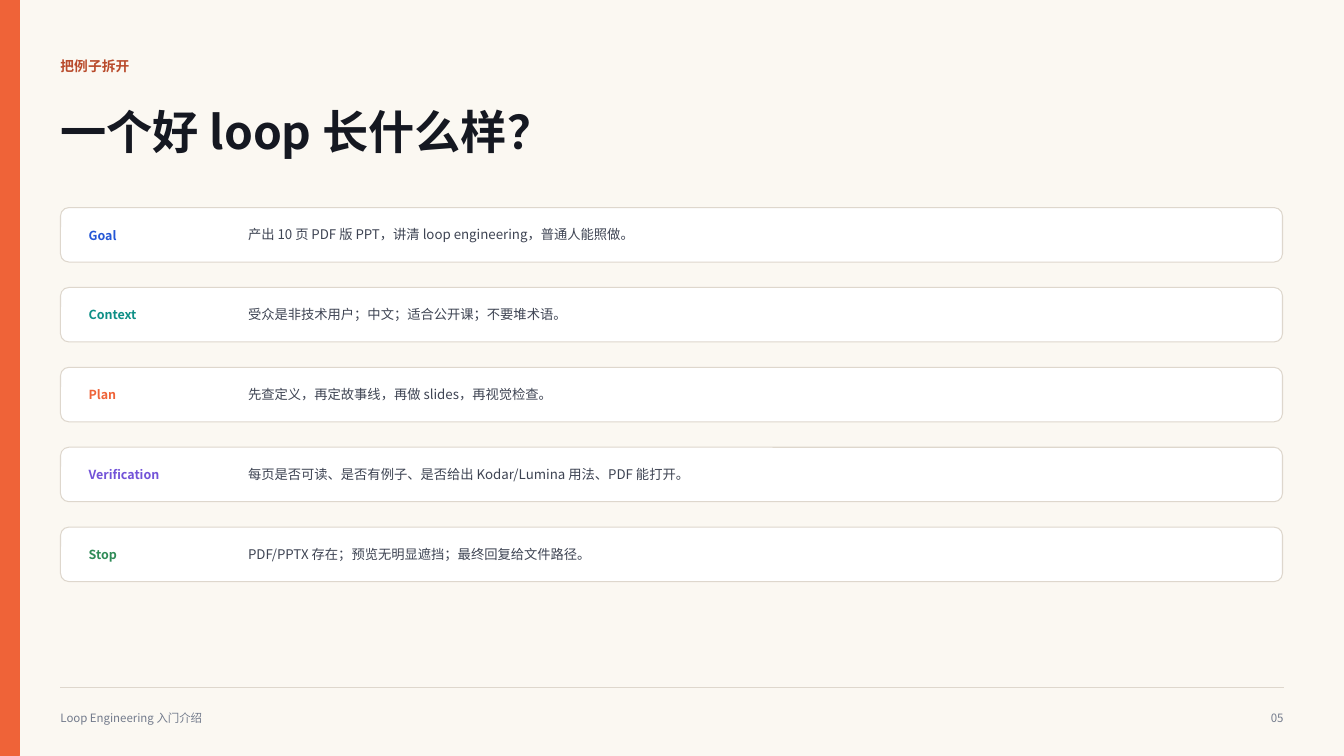
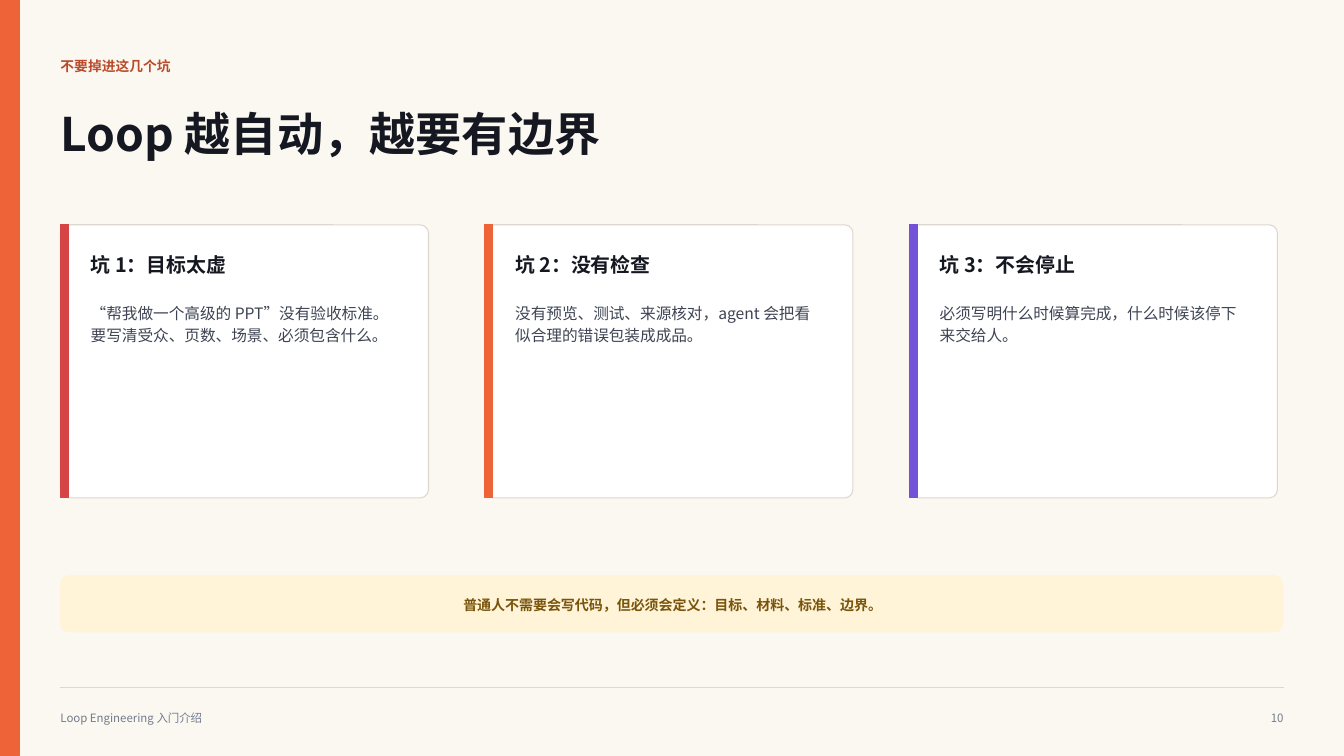
from dataclasses import dataclass

import pptx
import pptx.dml.color
import pptx.enum.shapes
import pptx.enum.text
import pptx.oxml
import pptx.oxml.ns
import pptx.presentation
import pptx.shapes.autoshape
import pptx.slide
import pptx.util

Inches = pptx.util.Inches
RGBColor = pptx.dml.color.RGBColor
Align = pptx.enum.text.PP_ALIGN
Shape = pptx.enum.shapes.MSO_SHAPE
Slide = pptx.slide.Slide

# Theme
FONT = "Noto Sans CJK SC"
PAPER = RGBColor(0xFB, 0xF8, 0xF2)
WHITE = RGBColor(0xFF, 0xFF, 0xFF)
RULE = RGBColor(0xDE, 0xD7, 0xCD)
INK = RGBColor(0x15, 0x18, 0x21)
BODY = RGBColor(0x3E, 0x44, 0x53)
MUTED = RGBColor(0x73, 0x7B, 0x8C)
RUST = RGBColor(0xB9, 0x4B, 0x2C)
ORANGE = RGBColor(0xEF, 0x63, 0x38)
BLUE = RGBColor(0x24, 0x57, 0xD6)
TEAL = RGBColor(0x0E, 0x8F, 0x86)
PURPLE = RGBColor(0x72, 0x53, 0xD8)
GREEN = RGBColor(0x2F, 0x8B, 0x57)
RED = RGBColor(0xD6, 0x45, 0x45)
CREAM = RGBColor(0xFF, 0xF4, 0xD8)
BROWN = RGBColor(0x79, 0x54, 0x0B)

# Shared layout, in inches
SLIDE_W, SLIDE_H = 13.33, 7.5
LEFT, RIGHT = 0.6, 12.73
CONTENT_W = 12.12
CORNER = 0.083


@dataclass(frozen=True)
class Box:
    left: float
    top: float
    width: float
    height: float

    def emu(self) -> tuple[int, ...]:
        return tuple(Inches(v) for v in (self.left, self.top, self.width, self.height))


@dataclass(frozen=True)
class Row:
    label: str
    text: str
    color: RGBColor


@dataclass(frozen=True)
class Card:
    heading: str
    text: str
    color: RGBColor


ROWS = [
    Row("Goal", "产出 10 页 PDF 版 PPT，讲清 loop engineering，普通人能照做。", BLUE),
    Row("Context", "受众是非技术用户；中文；适合公开课；不要堆术语。", TEAL),
    Row("Plan", "先查定义，再定故事线，再做 slides，再视觉检查。", ORANGE),
    Row("Verification",
        "每页是否可读、是否有例子、是否给出 Kodar/Lumina 用法、PDF 能打开。", PURPLE),
    Row("Stop", "PDF/PPTX 存在；预览无明显遮挡；最终回复给文件路径。", GREEN),
]

CARDS = [
    Card("坑 1：目标太虚",
         "“帮我做一个高级的 PPT”没有验收标准。要写清受众、页数、场景、必须包含什么。", RED),
    Card("坑 2：没有检查",
         "没有预览、测试、来源核对，agent 会把看似合理的错误包装成成品。", ORANGE),
    Card("坑 3：不会停止",
         "必须写明什么时候算完成，什么时候该停下来交给人。", PURPLE),
]


def write(sp: pptx.shapes.autoshape.Shape, text: str, *, size: float, color: RGBColor,
          bold: bool = False, align: Align = Align.LEFT, spacing: float = 1.12) -> None:
    """Put one formatted paragraph into a shape without insets."""
    tf = sp.text_frame
    tf.margin_left = tf.margin_right = tf.margin_top = tf.margin_bottom = 0
    tf.word_wrap = True
    tf.auto_size = pptx.enum.text.MSO_AUTO_SIZE.NONE
    tf.vertical_anchor = pptx.enum.text.MSO_ANCHOR.TOP
    p = tf.paragraphs[0]
    p.alignment = align
    p.line_spacing = spacing
    r = p.add_run()
    r.text = text
    r.font.name = FONT
    r.font.size = pptx.util.Pt(size)
    r.font.bold = bold
    r.font.color.rgb = color
    # East Asian characters take their font from a:ea
    ea = pptx.oxml.parse_xml(f'<a:ea {pptx.oxml.ns.nsdecls("a")} typeface="{FONT}"/>')
    r.font._element.find(pptx.oxml.ns.qn("a:latin")).addnext(ea)


def add_text(s: Slide, box: Box, text: str, *, size: float, color: RGBColor,
             bold: bool = False, align: Align = Align.LEFT, spacing: float = 1.12) -> None:
    write(s.shapes.add_textbox(*box.emu()), text, size=size, color=color,
          bold=bold, align=align, spacing=spacing)


def add_panel(s: Slide, box: Box, fill: RGBColor, line: RGBColor,
              rounded: bool = True) -> None:
    kind = Shape.ROUNDED_RECTANGLE if rounded else Shape.RECTANGLE
    sp = s.shapes.add_shape(kind, *box.emu())
    if rounded:
        sp.adjustments[0] = CORNER / min(box.width, box.height)
    sp.shadow.inherit = False
    sp.fill.solid()
    sp.fill.fore_color.rgb = fill
    sp.line.color.rgb = line
    sp.line.width = pptx.util.Pt(0.75)


def add_rule(s: Slide, y: float) -> None:
    c = s.shapes.add_connector(pptx.enum.shapes.MSO_CONNECTOR.STRAIGHT,
                               Inches(LEFT), Inches(y), Inches(RIGHT), Inches(y))
    c.line.color.rgb = RULE
    c.line.width = pptx.util.Pt(0.75)
    c._element.spPr.append(
        pptx.oxml.parse_xml(f'<a:effectLst {pptx.oxml.ns.nsdecls("a")}/>'))


def add_slide(prs: pptx.presentation.Presentation, number: int, kicker: str,
              title: str, title_top: float) -> Slide:
    """Add a slide with the side band, footer, kicker and title."""
    s = prs.slides.add_slide(prs.slide_layouts.get_by_name("Title Only"))
    add_panel(s, Box(0, 0, 0.19, SLIDE_H), ORANGE, ORANGE, rounded=False)
    # Footer
    add_rule(s, 6.82)
    add_text(s, Box(LEFT, 7.04, 5.42, 0.25), "Loop Engineering 入门介绍",
             size=8.2, color=MUTED, spacing=1.08)
    add_text(s, Box(RIGHT - 0.5, 7.04, 0.5, 0.25), f"{number:02d}",
             size=8.2, color=MUTED, align=Align.RIGHT, spacing=1.08)
    # Heading
    add_text(s, Box(LEFT, 0.56, 8.96, 0.25), kicker,
             size=9.8, color=RUST, bold=True, spacing=1.08)
    sp = s.shapes.title
    sp.left, sp.top, sp.width, sp.height = Box(LEFT, title_top, 8.54, 0.58).emu()
    write(sp, title, size=33, color=INK, bold=True, spacing=0.96)
    return s


def add_rows(s: Slide, rows: list[Row]) -> None:
    first, last = 2.06, 5.23
    pitch = (last - first) / (len(rows) - 1)
    for i, row in enumerate(rows):
        top = first + i * pitch
        add_panel(s, Box(LEFT, top, CONTENT_W, 0.54), WHITE, RULE)
        add_text(s, Box(0.88, top + 0.18, 1.35, 0.17), row.label,
                 size=8.9, color=row.color, bold=True)
        add_text(s, Box(2.46, top + 0.17, 9.38, 0.18), row.text, size=9.5, color=BODY)


def add_cards(s: Slide, cards: list[Card]) -> None:
    top, width, height, pitch = 2.23, 3.65, 2.71, 4.21
    for i, card in enumerate(cards):
        left = LEFT + i * pitch
        add_panel(s, Box(left, top, width, height), WHITE, RULE)
        add_panel(s, Box(left, top, 0.08, height), card.color, card.color, rounded=False)
        add_text(s, Box(left + 0.3, top + 0.25, 3.15, 0.29), card.heading,
                 size=14.2, color=INK, bold=True)
        add_text(s, Box(left + 0.3, top + 0.75, 3.06, 1.83), card.text,
                 size=11.2, color=BODY, spacing=1.18)


def main() -> None:
    prs = pptx.Presentation()
    prs.slide_width, prs.slide_height = Inches(SLIDE_W), Inches(SLIDE_H)
    bg = prs.slide_master.background.fill
    bg.solid()
    bg.fore_color.rgb = PAPER

    # Anatomy of a loop
    s = add_slide(prs, 5, "把例子拆开", "一个好 loop 长什么样？", 1.06)
    add_rows(s, ROWS)

    # Pitfalls and takeaway
    s = add_slide(prs, 10, "不要掉进这几个坑", "Loop 越自动，越要有边界", 1.08)
    add_cards(s, CARDS)
    add_panel(s, Box(LEFT, 5.71, CONTENT_W, 0.56), CREAM, CREAM)
    add_text(s, Box(0.9, 5.9, 11.54, 0.19),
             "普通人不需要会写代码，但必须会定义：目标、材料、标准、边界。",
             size=10, color=BROWN, bold=True, align=Align.CENTER)

    prs.save("out.pptx")


if __name__ == "__main__":
    main()
